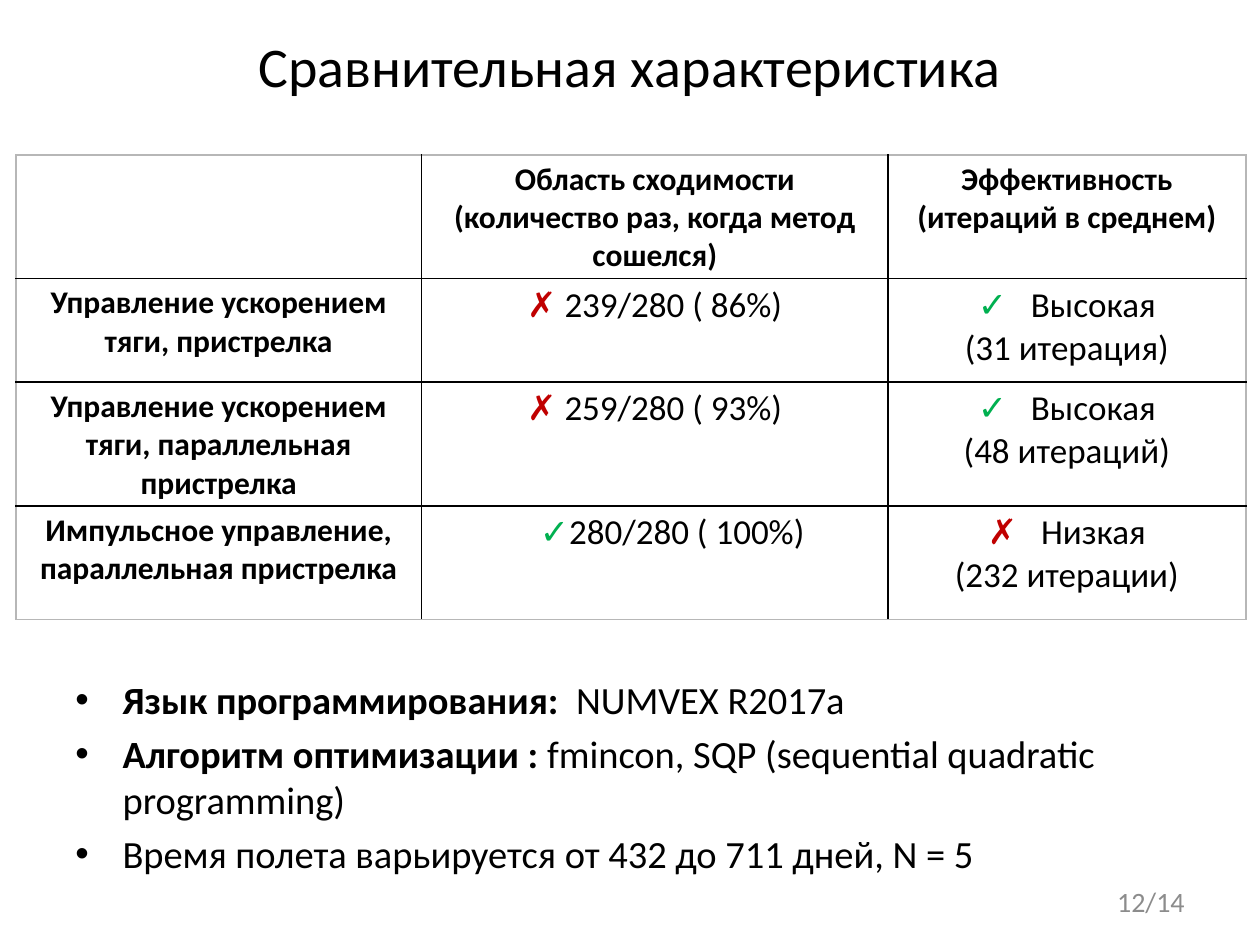
from pptx import Presentation
from pptx.dml.color import RGBColor
from pptx.enum import text as tx
from pptx.oxml import parse_xml
from pptx.oxml.ns import nsdecls
from pptx.util import Pt

BLACK, WHITE, GRAY, EDGE = "000000", "FFFFFF", "8C8C8C", "B7B7B7"
RED, GREEN = "C00000", "00B050"
MID, LEFT, RIGHT = tx.PP_ALIGN.CENTER, tx.PP_ALIGN.LEFT, tx.PP_ALIGN.RIGHT
NO, YES = ("✗ ", RED), ("✓ ", GREEN)

COLS = [232, 266.4, 204.6]
ROWS = [70, 59, 67, 65]
HEADS = [
    [],
    ["Область сходимости", "(количество раз, когда метод сошелся)"],
    ["Эффективность", "(итераций в среднем)"],
]
DATA = [
    ("Управление ускорением тяги, пристрелка",
     NO, "239/280 ( 86%)", YES, "Высокая", "(31 итерация)"),
    ("Управление ускорением тяги, параллельная пристрелка",
     NO, "259/280 ( 93%)", YES, "Высокая", "(48 итераций)"),
    ("Импульсное управление, параллельная пристрелка",
     ("✓", GREEN), "280/280 ( 100%)", NO, "Низкая", "(232 итерации)"),
]
NOTES = [
    ("Язык программирования: ", " NUMVEX R2017a"),
    ("Алгоритм оптимизации : ",
     "fmincon, SQP (sequential quadratic programming)"),
    ("", "Время полета варьируется от 432 до 711 дней, N = 5"),
]


def paint(form, color):
    form.rgb = RGBColor.from_string(color)


def write(para, words, size=20, color=BLACK, bold=False, align=MID, gap=0):
    para.alignment = align
    run = para.add_run()
    run.text = words
    font = run.font
    font.name, font.size, font.bold = "Calibri", Pt(size), bold
    paint(font.color, color)
    if gap:
        run._r.get_or_add_rPr().set("spc", str(int(gap * 100)))


def lines(frame, count):
    while len(frame.paragraphs) < count:
        frame.add_paragraph()
    return frame.paragraphs


def panel(slide, x, y, w, h, anchor=tx.MSO_ANCHOR.TOP):
    frame = slide.shapes.add_textbox(Pt(x), Pt(y), Pt(w), Pt(h)).text_frame
    frame.word_wrap = True
    frame.vertical_anchor = anchor
    return frame


def label(slide, words, x, y, w, h, **style):
    frame = panel(slide, x, y, w, h, tx.MSO_ANCHOR.MIDDLE)
    write(frame.paragraphs[0], words, **style)


def frame_cell(cell, sides):
    cell.fill.solid()
    paint(cell.fill.fore_color, WHITE)
    props = cell._tc.get_or_add_tcPr()
    for spot, (side, color) in enumerate(sides.items()):
        props.insert(spot, parse_xml(
            f'<a:{side} {nsdecls("a")} w="12700"><a:solidFill>'
            f'<a:srgbClr val="{color}"/></a:solidFill></a:{side}>'))


def grid(slide, x, y):
    table = slide.shapes.add_table(
        len(ROWS), len(COLS), Pt(x), Pt(y), Pt(sum(COLS)), Pt(sum(ROWS))).table
    table.first_row = table.horz_banding = False
    for col, w in zip(table.columns, COLS):
        col.width = Pt(w)
    for row, h in zip(table.rows, ROWS):
        row.height = Pt(h)
    for r in range(len(ROWS)):
        for c in range(len(COLS)):
            cell = table.cell(r, c)
            cell.margin_left = cell.margin_right = Pt(5)
            cell.margin_top = cell.margin_bottom = Pt(3)
            outer = {"lnL": c == 0, "lnR": c == len(COLS) - 1,
                     "lnT": r == 0, "lnB": r == len(ROWS) - 1}
            frame_cell(cell, {k: EDGE if v else BLACK
                              for k, v in outer.items()})
    for c, head in enumerate(HEADS):
        paras = lines(table.cell(0, c).text_frame, len(head))
        for para, words in zip(paras, head):
            write(para, words, size=18, bold=True)
    for r, (name, mark, share, sign, grade, steps) in enumerate(DATA, 1):
        first, second, third = (table.cell(r, c).text_frame for c in range(3))
        write(first.paragraphs[0], name, size=18, bold=True)
        para = second.paragraphs[0]
        write(para, mark[0], color=mark[1])
        write(para, share)
        if mark[1] == GREEN:
            para._p.get_or_add_pPr().set("marL", str(Pt(20)))
        top, low = lines(third, 2)
        write(top, sign[0], color=sign[1], gap=4.5)
        write(top, grade)
        write(low, steps)


def notes(slide, x, y, w, h):
    paras = lines(panel(slide, x, y, w, h), len(NOTES))
    for para, (lead, rest) in zip(paras, NOTES):
        para.space_before = Pt(4.4)
        if lead:
            write(para, lead, size=22, bold=True, align=LEFT)
        write(para, rest, size=22, align=LEFT)
        props = para._p.get_or_add_pPr()
        props.set("marL", str(Pt(27)))
        props.set("indent", str(-Pt(27)))
        props.append(parse_xml(
            f'<a:buFont {nsdecls("a")} typeface="Arial"/>'))
        props.append(parse_xml(f'<a:buChar {nsdecls("a")} char="•"/>'))


def main():
    deck = Presentation()
    deck.slide_width, deck.slide_height = Pt(720), Pt(540)
    slide = deck.slides.add_slide(deck.slide_layouts[6])
    label(slide, "Сравнительная характеристика", 36, -8, 648, 90, size=32)
    grid(slide, 9, 88.5)
    notes(slide, 36, 383, 648, 122)
    label(slide, "12/14", 516, 500.5, 168, 29,
          size=16, color=GRAY, align=RIGHT)
    deck.save("out.pptx")


if __name__ == "__main__":
    main()
